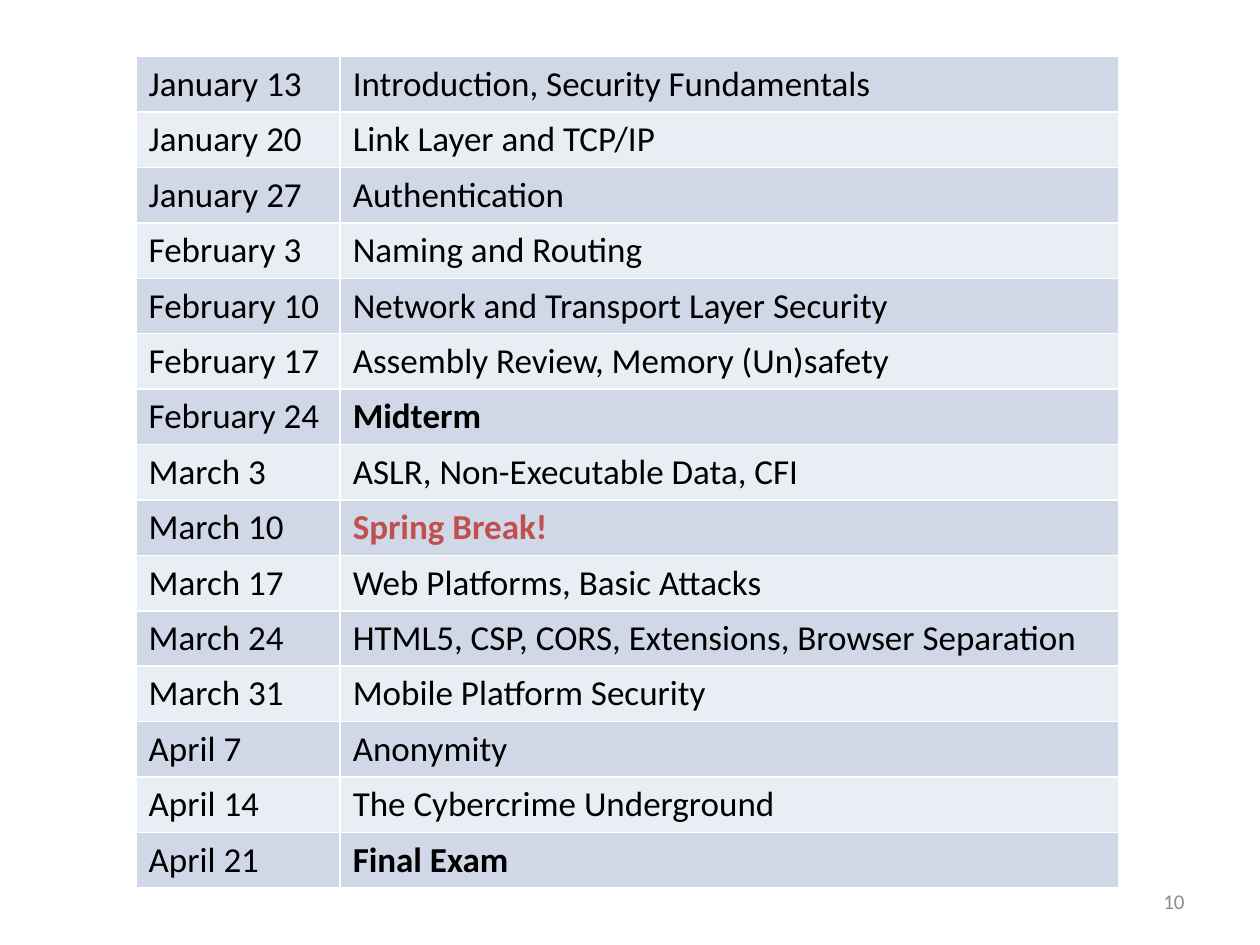
import pptx
import pptx.dml.color
import pptx.enum.text
import pptx.util
from pptx.util import Inches

FONT = "Calibri"
COLORS = {
    "text": "000000",
    "holiday": "C0504D",
    "odd_row": "D0D8E8",
    "even_row": "E9EDF4",
    "page_number": "8C8C8C",
}

SCHEDULE = [
    ("January 13", "Introduction, Security Fundamentals"),
    ("January 20", "Link Layer and TCP/IP"),
    ("January 27", "Authentication"),
    ("February 3", "Naming and Routing"),
    ("February 10", "Network and Transport Layer Security"),
    ("February 17", "Assembly Review, Memory (Un)safety"),
    ("February 24", "Midterm"),
    ("March 3", "ASLR, Non-Executable Data, CFI"),
    ("March 10", "Spring Break!"),
    ("March 17", "Web Platforms, Basic Attacks"),
    ("March 24", "HTML5, CSP, CORS, Extensions, Browser Separation"),
    ("March 31", "Mobile Platform Security"),
    ("April 7", "Anonymity"),
    ("April 14", "The Cybercrime Underground"),
    ("April 21", "Final Exam"),
]
# Topics in bold, with their colours
HIGHLIGHTS = {"Midterm": "text", "Spring Break!": "holiday", "Final Exam": "text"}
PAGE_NUMBER = "10"

TABLE_LEFT, TABLE_TOP = 1.08, 0.45
COLUMN_WIDTHS = (1.62, 6.18)
ROW_HEIGHT = 0.44


def rgb(name):
    return pptx.dml.color.RGBColor.from_string(COLORS[name])


def style(paragraph, size, color, bold=False):
    font = paragraph.font
    font.name = FONT
    font.size = pptx.util.Pt(size)
    font.bold = bold
    font.color.rgb = rgb(color)


def add_schedule(slide):
    table = slide.shapes.add_table(
        len(SCHEDULE), len(COLUMN_WIDTHS),
        Inches(TABLE_LEFT), Inches(TABLE_TOP),
        Inches(sum(COLUMN_WIDTHS)), Inches(ROW_HEIGHT * len(SCHEDULE)),
    ).table
    # The table style supplies the thin white borders
    table.first_row = False
    for column, width in zip(table.columns, COLUMN_WIDTHS):
        column.width = Inches(width)
    for index, (row, texts) in enumerate(zip(table.rows, SCHEDULE)):
        row.height = Inches(ROW_HEIGHT)
        for cell, text in zip(row.cells, texts):
            cell.text = text
            cell.fill.solid()
            cell.fill.fore_color.rgb = rgb("even_row" if index % 2 else "odd_row")
            style(cell.text_frame.paragraphs[0], 20,
                  HIGHLIGHTS.get(text, "text"), text in HIGHLIGHTS)


def add_page_number(slide):
    box = slide.shapes.add_textbox(Inches(7.17), Inches(6.95), Inches(2.33), Inches(0.4))
    frame = box.text_frame
    frame.word_wrap = True
    frame.vertical_anchor = pptx.enum.text.MSO_ANCHOR.MIDDLE
    frame.text = PAGE_NUMBER
    paragraph = frame.paragraphs[0]
    paragraph.alignment = pptx.enum.text.PP_ALIGN.RIGHT
    style(paragraph, 12, "page_number")


def main():
    presentation = pptx.Presentation()
    presentation.slide_width = Inches(10)
    presentation.slide_height = Inches(7.5)
    slide = presentation.slides.add_slide(presentation.slide_layouts[6])
    add_page_number(slide)
    add_schedule(slide)
    presentation.save("out.pptx")


if __name__ == "__main__":
    main()
